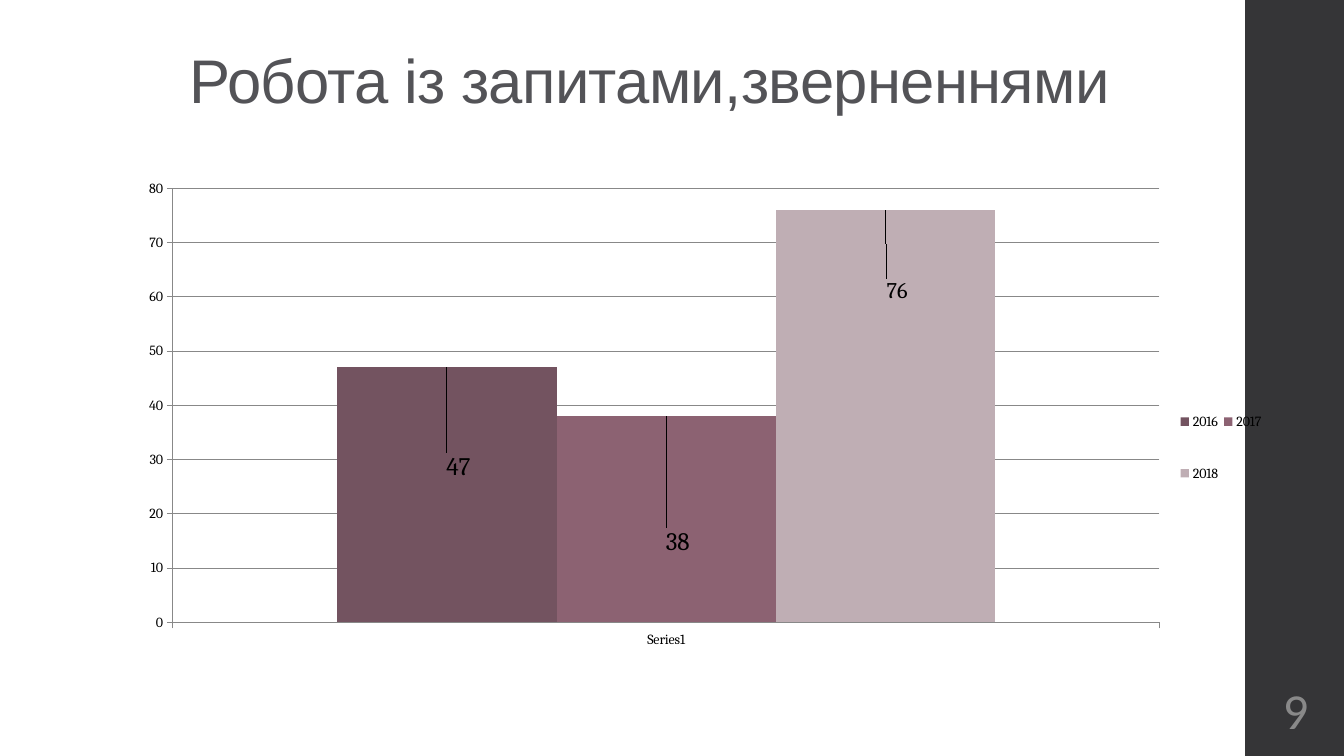
from lxml import etree
from pptx import Presentation
from pptx.chart.data import CategoryChartData
from pptx.dml.color import RGBColor
from pptx.enum.chart import XL_CHART_TYPE, XL_LABEL_POSITION, XL_LEGEND_POSITION, XL_TICK_LABEL_POSITION, XL_TICK_MARK
from pptx.enum.shapes import MSO_SHAPE
from pptx.enum.text import MSO_ANCHOR, PP_ALIGN
from pptx.oxml.ns import qn
from pptx.util import Inches, Pt

COLUMNS = XL_CHART_TYPE.COLUMN_CLUSTERED
ABOVE_BAR = XL_LABEL_POSITION.OUTSIDE_END
LEGEND_RIGHT = XL_LEGEND_POSITION.RIGHT
LABELS_LOW = XL_TICK_LABEL_POSITION.LOW
TICK_OUT = XL_TICK_MARK.OUTSIDE
RECTANGLE = MSO_SHAPE.RECTANGLE
BOTTOM, MIDDLE = MSO_ANCHOR.BOTTOM, MSO_ANCHOR.MIDDLE
LEFT, CENTER = PP_ALIGN.LEFT, PP_ALIGN.CENTER

BAND = RGBColor(0x35, 0x35, 0x37)
TITLE = RGBColor(0x53, 0x53, 0x57)
NUMBER = RGBColor(0x89, 0x89, 0x89)
GRID = RGBColor(0x88, 0x88, 0x88)
BLACK = RGBColor(0, 0, 0)
PLUM = RGBColor(0x73, 0x53, 0x60)
MAUVE = RGBColor(0x8C, 0x62, 0x72)
ROSE = RGBColor(0xBF, 0xAE, 0xB4)

YEARS = [
    ("2016", 47, PLUM, 18, (0.01, 0.23)),
    ("2017", 38, MAUVE, 18, (0.01, 0.28)),
    ("2018", 76, ROSE, 16, (0.01, 0.19)),
]


def set_format(target, values):
    for name, value in values.items():
        setattr(target, name, value)


def set_font(font, name, size, color):
    set_format(font, {"name": name, "size": Pt(size)})
    font.color.rgb = color


def add_band(page, left, top, width, height):
    band = page.shapes.add_shape(RECTANGLE, *map(Inches, (left, top, width, height)))
    band.shadow.inherit = False
    band.fill.solid()
    band.fill.fore_color.rgb = BAND
    band.line.fill.background()


def add_text(page, place, text, font, anchor, align, spacing=0):
    box = page.shapes.add_textbox(*map(Inches, place))
    frame = box.text_frame
    set_format(frame, {"word_wrap": True, "vertical_anchor": anchor,
                       "margin_top": Inches(0.05), "margin_bottom": Inches(0.05)})
    para = frame.paragraphs[0]
    set_format(para, {"alignment": align, "line_spacing": 0.9})
    span = para.add_run()
    span.text = text
    set_font(span.font, *font)
    if spacing:
        span.font._element.set("spc", str(int(spacing * 100)))


def make_layout(**values):
    layout = etree.Element(qn("c:layout"))
    manual = etree.SubElement(layout, qn("c:manualLayout"))
    for name, value in values.items():
        etree.SubElement(manual, qn(f"c:{name}")).set("val", str(value))
    return layout


def format_series(series, color, size, offset):
    series.format.fill.solid()
    series.format.fill.fore_color.rgb = color
    label = series.points[0].data_label
    set_font(label.font, "Cambria", size, BLACK)
    label.position = ABOVE_BAR
    x, y = offset
    index = series._element.find(f".//{qn('c:dLbl')}/{qn('c:idx')}")
    index.addnext(make_layout(x=x, y=y))


def format_axes(chart):
    for axis in (chart.category_axis, chart.value_axis):
        set_format(axis, {"major_tick_mark": TICK_OUT})
        axis.format.line.color.rgb = GRID
    chart.category_axis.tick_label_position = LABELS_LOW
    set_format(chart.value_axis, {"minimum_scale": 0, "maximum_scale": 80,
                                  "major_unit": 10, "has_major_gridlines": True})
    chart.value_axis.major_gridlines.format.line.color.rgb = GRID


def place_parts(chart):
    plot_area = chart._chartSpace.chart.plotArea
    for layout in plot_area.findall(qn("c:layout")):
        plot_area.remove(layout)
    plot_area.insert(0, make_layout(layoutTarget="inner", xMode="edge", yMode="edge",
                                    x=0.056, y=0.033, w=0.851, h=0.841))
    legend = chart.legend._element
    for layout in legend.findall(qn("c:layout")):
        legend.remove(layout)
    legend.find(qn("c:legendPos")).addnext(
        make_layout(xMode="edge", yMode="edge", x=0.92, y=0.4, w=0.08, h=0.27))


def add_requests_chart(page, place):
    data = CategoryChartData()
    data.categories = ["Series1"]
    for year, count, *_ in YEARS:
        data.add_series(year, [count])
    chart = page.shapes.add_chart(COLUMNS, *map(Inches, place), data).chart
    set_font(chart.font, "Cambria", 10, BLACK)
    set_format(chart, {"has_title": False, "has_legend": True})
    set_format(chart.legend, {"position": LEGEND_RIGHT, "include_in_layout": False})
    plot = chart.plots[0]
    set_format(plot, {"gap_width": 150, "overlap": 0, "vary_by_categories": False})
    for series, (_, _, color, size, offset) in zip(plot.series, YEARS):
        format_series(series, color, size, offset)
    format_axes(chart)
    place_parts(chart)


def main():
    deck = Presentation()
    set_format(deck, {"slide_width": Inches(13.33), "slide_height": Inches(7.5)})
    page = deck.slides.add_slide(deck.slide_layouts[6])
    add_band(page, 12.35, 0, 0.98, 7.5)
    add_text(page, (1.78, 0.44, 10.55, 0.77), "Робота із запитами,зверненнями",
             ("Arial", 44, TITLE), BOTTOM, LEFT, -0.5)
    add_text(page, (12.35, 6.75, 1, 0.65), "9", ("Calibri", 36, NUMBER), MIDDLE, CENTER)
    add_requests_chart(page, (1.07, 1.7, 11.5, 5.12))
    deck.save("out.pptx")


if __name__ == "__main__":
    main()
